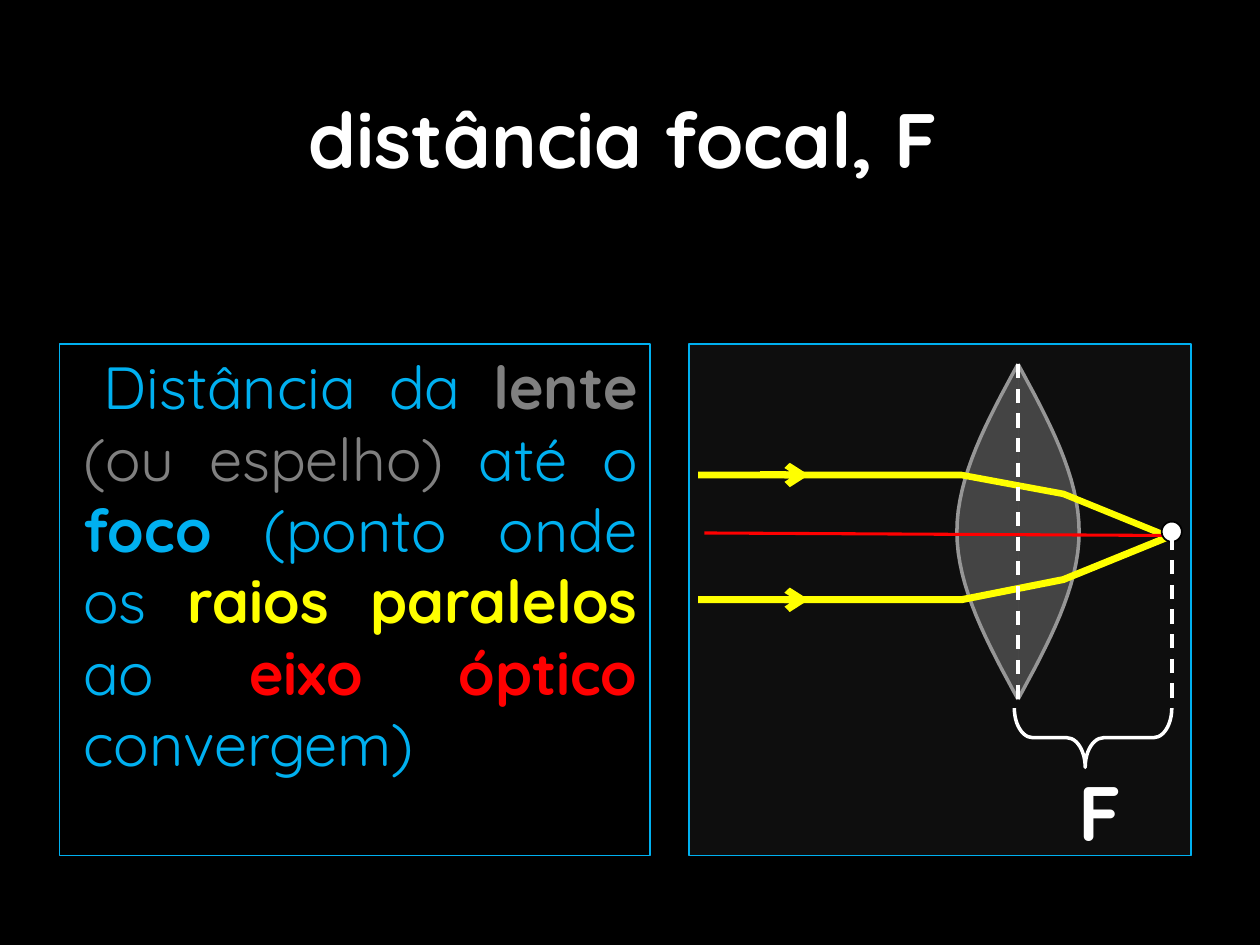
from lxml import etree
from pptx import Presentation
from pptx.dml.color import RGBColor
from pptx.enum import dml, shapes, text
from pptx.oxml import ns
from pptx.util import Inches, Pt

FONT = "Quicksand"
WHITE, CYAN, GRAY, YELLOW, RED = "FFFFFF", "00B0F0", "808080", "FFFF00", "FF0000"
TOP, TALL = 2.73, 4.06
AXIS, FOCUS = 8.08, 9.3
TIP, MID, BASE = 2.89, 4.22, 5.55


def paint(part, color):
    """Give a fill or line a solid colour."""
    part.solid()
    part.fore_color.rgb = RGBColor.from_string(color)


def add_node(parent, tag, **attrs):
    """Append a drawing element to its parent."""
    return etree.SubElement(parent, ns.qn(tag), attrs)


def fade(shape, percent):
    """Set the opacity of a solid fill."""
    color = shape.fill._xPr.find(ns.qn("a:solidFill"))[0]
    add_node(color, "a:alpha", val=str(percent * 1000))


def trim(shape, color, width):
    """Set the outline."""
    paint(shape.line.fill, color)
    shape.line.width = Pt(width)


def style(shape, line, width, fill=None, alpha=None):
    """Set outline, fill and opacity, without shadow."""
    shape.shadow.inherit = False
    trim(shape, line, width)
    if fill:
        paint(shape.fill, fill)
    else:
        shape.fill.background()
    if alpha:
        fade(shape, alpha)


def place(shape, *box):
    """Move and size a shape in inches."""
    for name, value in zip(("left", "top", "width", "height"), box):
        setattr(shape, name, Inches(value))


def add_run(para, words, color, size, bold=False):
    """Add a formatted run."""
    run = para.add_run()
    run.text = words
    for name, value in {"name": FONT, "size": Pt(size), "bold": bold}.items():
        setattr(run.font, name, value)
    run.font.color.rgb = RGBColor.from_string(color)


def add_form(slide, kind, box, *look):
    """Add a styled preset shape."""
    form = slide.shapes.add_shape(kind, *map(Inches, box))
    style(form, *look)
    return form


def add_path(slide, points, *look):
    """Add an open outline through the points."""
    spots = [(Inches(x), Inches(y)) for x, y in points]
    pen = slide.shapes.build_freeform(*spots[0])
    pen.add_line_segments(spots[1:], close=False)
    style(pen.convert_to_shape(), *look)


def add_line(slide, start, end, color, width, dash=False, arrow=False):
    """Add a straight line, dashed or with an arrowhead."""
    ends = map(Inches, start + end)
    line = slide.shapes.add_connector(shapes.MSO_CONNECTOR.STRAIGHT, *ends)
    trim(line, color, width)
    if dash:
        line.line.dash_style = dml.MSO_LINE.DASH
    if arrow:
        add_node(line.line._get_or_add_ln(), "a:tailEnd", type="arrow")
    add_node(line._element.spPr, "a:effectLst")


def add_title(slide):
    """Fill the title."""
    title = slide.shapes.title
    place(title, 0.7, 0.47, 8.5, 1.25)
    frame = title.text_frame
    frame.vertical_anchor = text.MSO_ANCHOR.MIDDLE
    para = frame.paragraphs[0]
    para.alignment = text.PP_ALIGN.CENTER
    add_run(para, "distância focal, F", WHITE, 44, True)


def add_body(slide):
    """Fill the definition."""
    body = slide.placeholders[1]
    place(body, 0.47, TOP, 4.69, TALL)
    trim(body, CYAN, 0.75)
    body.text_frame.auto_size = text.MSO_AUTO_SIZE.NONE
    para = body.text_frame.paragraphs[0]
    para.alignment = text.PP_ALIGN.JUSTIFY
    props = para._p.get_or_add_pPr()
    props.set("marL", str(Inches(0.09)))
    props.set("indent", str(Inches(-0.09)))
    add_node(props, "a:buNone")
    add_run(para, " ", "D2D2F4", 32)
    for words, color, bold in (
        ("Distância da ", CYAN, False),
        ("lente", GRAY, True),
        (" (ou espelho) ", GRAY, False),
        ("até o ", CYAN, False),
        ("foco", CYAN, True),
        (" (ponto onde os ", CYAN, False),
        ("raios paralelos ", YELLOW, True),
        ("ao ", CYAN, False),
        ("eixo óptico ", RED, True),
        ("convergem)", CYAN, False),
    ):
        add_run(para, words, color, 34, bold)


def bend(points, t):
    """Find a point on a cubic curve."""
    parts = ((1 - t) ** 3, 3 * t * (1 - t) ** 2, 3 * t * t * (1 - t), t ** 3)
    return tuple(sum(p * c for p, c in zip(parts, axis)) for axis in zip(*points))


def add_lens(slide, steps=16):
    """Draw both halves of the lens."""
    for side in (-1, 1):
        near, far = AXIS + side * 0.24, AXIS + side * 0.485
        upper = [(AXIS, TIP), (near, 3.33), (far, 3.78), (far, MID)]
        half = [bend(upper, i / steps) for i in range(steps + 1)]
        mirror = [(x, 2 * MID - y) for x, y in half[-2::-1]]
        add_path(slide, half + mirror, "969696", 2, GRAY, 48)


def add_rays(slide):
    """Draw the two rays that meet at the focus."""
    for y, inner, end, width in ((3.77, 3.92, 4.27, 3.75), (4.76, 4.6, 4.25, 4)):
        points = [(5.54, y), (7.63, y), (8.44, inner), (FOCUS, end)]
        add_path(slide, points, YELLOW, width)


def add_label(slide):
    """Name the focal length."""
    box = slide.shapes.add_textbox(*map(Inches, (8.46, 6.02, 0.5, 0.84)))
    frame = box.text_frame
    frame.word_wrap = False
    frame.auto_size = text.MSO_AUTO_SIZE.SHAPE_TO_FIT_TEXT
    para = frame.paragraphs[0]
    para.alignment = text.PP_ALIGN.CENTER
    add_run(para, "F", WHITE, 44, True)


def main():
    """Build the slide."""
    deck = Presentation()
    deck.slide_width, deck.slide_height = Inches(10), Inches(7.5)
    slide = deck.slides.add_slide(deck.slide_layouts[1])
    paint(slide.background.fill, "000000")
    kinds = shapes.MSO_SHAPE
    add_title(slide)
    add_body(slide)
    add_form(slide, kinds.RECTANGLE, (5.47, TOP, 3.98, TALL), CYAN, 1, "707070", 13)
    add_lens(slide)
    add_rays(slide)
    add_line(slide, (5.59, 4.23), (FOCUS, 4.25), RED, 1.75)
    add_form(slide, kinds.OVAL, (9.22, 4.14, 0.16, 0.16), "000000", 1, WHITE)
    for x, y in ((AXIS, TIP), (FOCUS, 4.25)):
        add_line(slide, (x, y), (x, BASE), WHITE, 2, dash=True)
    brace = add_form(slide, kinds.RIGHT_BRACE, (8.44, 5.23, 0.47, 1.25), WHITE, 2)
    brace.rotation = 90
    brace.adjustments[0], brace.adjustments[1] = 0.31, 0.55
    for y in (3.77, 4.76):
        add_line(slide, (6.03, y), (6.42, y), YELLOW, 4, arrow=True)
    add_label(slide)
    deck.save("out.pptx")


if __name__ == "__main__":
    main()
